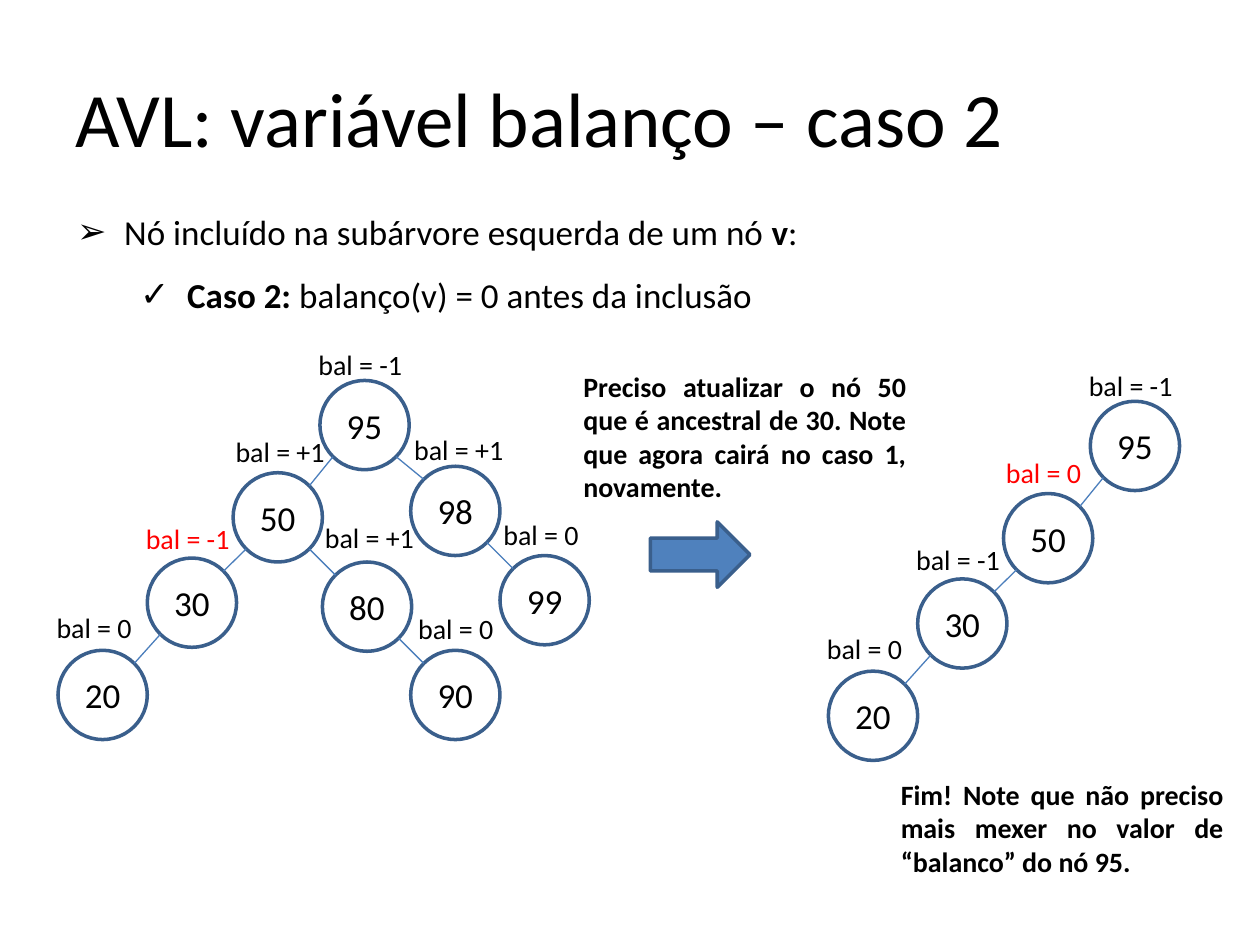
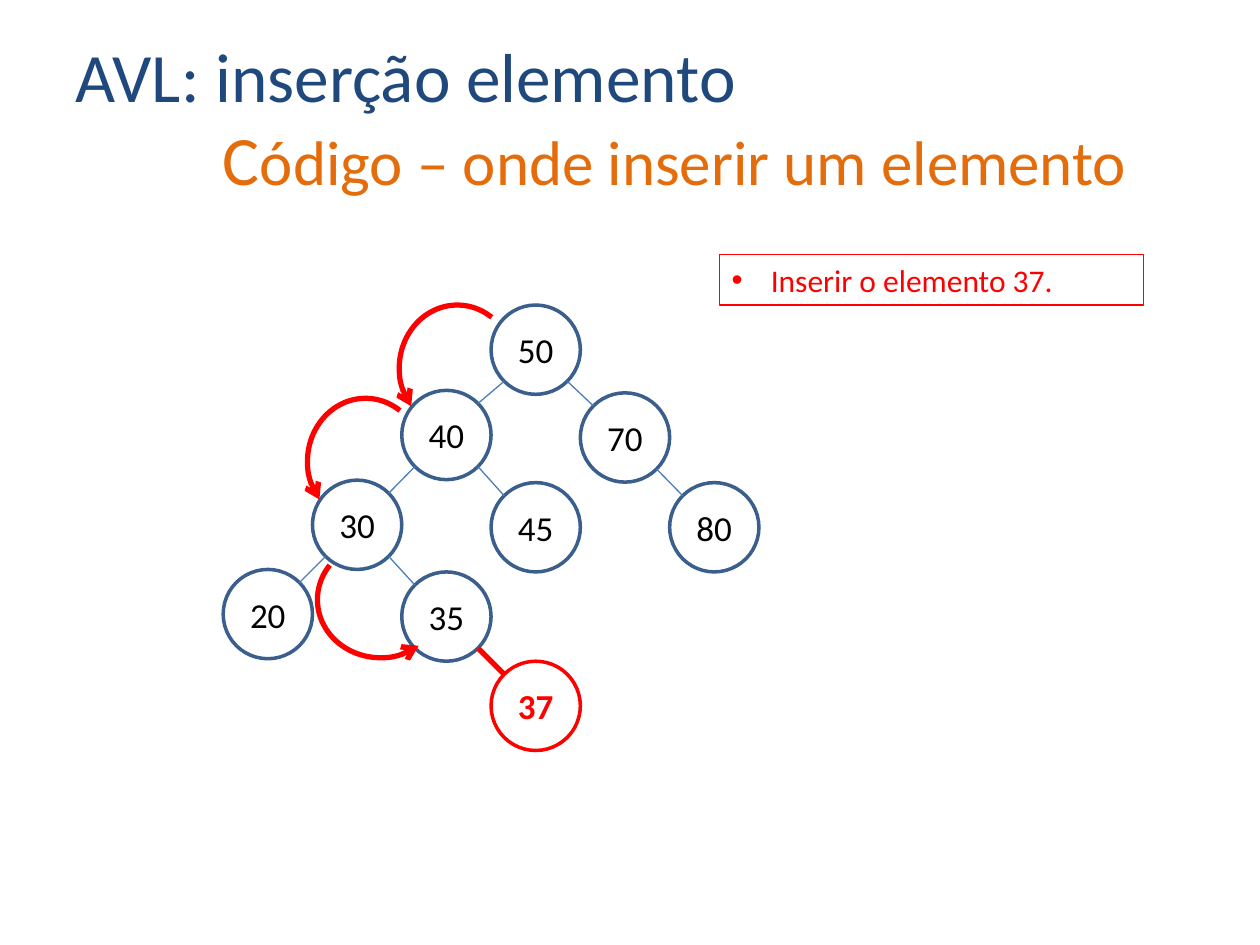
import pptx
import pptx.util
import pptx.dml.color
import pptx.enum.shapes
import pptx.enum.text
import pptx.oxml.ns
import lxml.etree

Cm, Pt = pptx.util.Cm, pptx.util.Pt
SHAPE = pptx.enum.shapes.MSO_SHAPE
ALIGN = pptx.enum.text.PP_ALIGN
ANCHOR = pptx.enum.text.MSO_ANCHOR

COLORS = {"text": "000000", "node": "3A5F8C", "edge": "4B7EBC", "arrow": "4F81BD",
          "mark": "FF0000", "title": "1F497D", "subtitle": "E46C0A"}
FONT = "Calibri"
NODE = 1.8                      # node diameter, cm
CORNER = NODE / 2 * 0.5 ** 0.5  # centre to the 45-degree point of a node

# Slide 1: runs are (text, bold)
CASE_TITLE = "AVL: variável balanço – caso 2"
CASE_LIST = [
    (0, "➢", 0.95, 0, [("Nó incluído na subárvore esquerda de um nó ", False),
                       ("v", True), (":", False)]),
    (1, "✓", 2.22, 12, [("Caso 2: ", True), ("balanço(v) = 0 antes da inclusão", False)]),
]
CASE_NODES = {"30": (2.97, 11.25), "20": (1.17, 13.11), "50": (4.7, 9.53), "80": (6.5, 11.33),
              "90": (8.28, 13.11), "95": (6.45, 7.67), "98": (8.28, 9.4), "99": (10.08, 11.2)}
CASE_EDGES = [("95", "50"), ("95", "98"), ("50", "30"), ("50", "80"),
              ("98", "99"), ("30", "20"), ("80", "90")]
LABEL_OFFSETS = {"30": (-0.28, -0.86), "20": (-0.28, -0.93), "50": (-0.2, -0.9),
                 "80": (-0.2, -0.96), "90": (-0.1, -0.91), "95": (-0.28, -0.78),
                 "98": (-0.18, -0.81), "99": (-0.18, -0.89)}
BEFORE = {"30": "-1", "20": "0", "50": "+1", "80": "+1",
          "90": "0", "95": "-1", "98": "+1", "99": "0"}
AFTER = {"30": "-1", "20": "0", "50": "0", "95": "-1"}
AFTER_SHIFT = (15.53, 0.42)
NOTES = [
    (11.51, 7.32, 3.0, "Preciso atualizar o nó 50 que é ancestral de 30. "
                       "Note que agora cairá no caso 1, novamente."),
    (17.91, 15.54, 2.31, "Fim! Note que não preciso mais mexer no valor de “balanco” do nó 95."),
]

# Slide 2: nodes are (column, top)
INSERT_TITLE = [("AVL: inserção elemento", 39.6, "title"), ("C", 39.6, "subtitle"),
                ("ódigo – onde inserir um elemento", 36, "subtitle")]
TASK = "Inserir o elemento 37."
GRID = {"50": (3, 6.15), "40": (2, 7.87), "70": (4, 7.92), "30": (1, 9.68), "80": (5, 9.73),
        "45": (3, 9.73), "20": (0, 11.48), "35": (2, 11.53), "37": (3, 13.33)}
INSERT_NODES = {key: (4.5 + NODE * col, top) for key, (col, top) in GRID.items()}
INSERT_EDGES = [("50", "70"), ("50", "40"), ("40", "30"), ("30", "20"),
                ("40", "45"), ("70", "80"), ("30", "35"), ("35", "37")]
INSERTED = "37"
PATH_ARCS = [(8.05, 6.15, 0), (6.2, 8.03, 0), (6.5, 10.82, 270)]


def rgb(name):
    return pptx.dml.color.RGBColor.from_string(COLORS[name])


def add_xml(parent, tag, **attrs):
    return lxml.etree.SubElement(parent, pptx.oxml.ns.qn(tag), attrs)


def set_line(sp, color, width):
    sp.line.color.rgb = rgb(color)
    sp.line.width = Pt(width)


def style(p, size, color="text", bold=None, align=None):
    p.font.name, p.font.size, p.font.bold = FONT, Pt(size), bold
    p.font.color.rgb = rgb(color)
    p.alignment = align


def set_indent(p, indent, bullet=None):
    """Hang the first line by the given cm; call before style()."""
    pPr = p._p.get_or_add_pPr()
    hang = indent if indent < 2 or bullet is None else 0.95
    pPr.set("marL", str(Cm(indent)))
    pPr.set("indent", str(-Cm(hang)))
    if bullet:
        add_xml(pPr, "a:buFont", typeface="Arial")
        add_xml(pPr, "a:buChar", char=bullet)


def place(sp, left, top, width, height):
    sp.left, sp.top, sp.width, sp.height = Cm(left), Cm(top), Cm(width), Cm(height)


def add_title(s):
    title = s.shapes.title
    place(title, 1.27, 0.76, 22.86, 3.18)
    title.text_frame.vertical_anchor = ANCHOR.MIDDLE
    return title.text_frame.paragraphs[0]


def add_shape(s, kind, left, top, width, height, line, line_width, fill=None):
    sp = s.shapes.add_shape(kind, Cm(left), Cm(top), Cm(width), Cm(height))
    sp.shadow.inherit = False
    set_line(sp, line, line_width)
    if fill:
        sp.fill.solid()
        sp.fill.fore_color.rgb = rgb(fill)
    else:
        sp.fill.background()
    return sp


def add_text(s, left, top, width, height, text, **font):
    tf = s.shapes.add_textbox(Cm(left), Cm(top), Cm(width), Cm(height)).text_frame
    tf.word_wrap = True
    p = tf.paragraphs[0]
    p.text = text
    style(p, 16, **font)


def add_tree(s, nodes, edges, shift=(0, 0), marked=None):
    nodes = {key: (x + shift[0], y + shift[1]) for key, (x, y) in nodes.items()}
    for key, (x, y) in nodes.items():
        hot = key == marked
        sp = add_shape(s, SHAPE.OVAL, x, y, NODE, NODE, "mark" if hot else "node", 2)
        sp.text_frame.word_wrap = False
        p = sp.text_frame.paragraphs[0]
        p.text = key
        style(p, 20, "mark" if hot else "text", hot, ALIGN.CENTER)
    half = NODE / 2
    for parent, child in edges:
        if parent not in nodes or child not in nodes:
            continue
        (x1, y1), (x2, y2) = nodes[parent], nodes[child]
        side = CORNER if x2 > x1 else -CORNER
        line = s.shapes.add_connector(
            pptx.enum.shapes.MSO_CONNECTOR.STRAIGHT,
            Cm(x1 + half + side), Cm(y1 + half + CORNER),
            Cm(x2 + half - side), Cm(y2 + half - CORNER))
        set_line(line, *(("mark", 3) if child == marked else ("edge", 0.75)))
        add_xml(line._element.spPr, "a:effectLst")
    return nodes


def add_balances(s, nodes, balances, changed):
    for key, value in balances.items():
        (x, y), (dx, dy) = nodes[key], LABEL_OFFSETS[key]
        add_text(s, x + dx, y + dy, 2.39, 0.94, f"bal = {value}",
                 color="mark" if key == changed else "text")


def build_case(prs):
    s = prs.slides.add_slide(prs.slide_layouts[1])
    p = add_title(s)
    p.text = CASE_TITLE
    style(p, 44, align=ALIGN.LEFT)

    body = s.placeholders[1]
    place(body, 1.3, 4.11, 22.71, 3.25)
    tf = body.text_frame
    for i, (level, bullet, indent, before, runs) in enumerate(CASE_LIST):
        p = tf.add_paragraph() if i else tf.paragraphs[0]
        p.level, p.space_before = level, Pt(before)
        set_indent(p, indent, bullet)
        style(p, 20, align=ALIGN.JUSTIFY)
        for text, bold in runs:
            r = p.add_run()
            r.text, r.font.bold = text, bold

    nodes = add_tree(s, CASE_NODES, CASE_EDGES)
    add_balances(s, nodes, BEFORE, "30")
    left_spine = {key: CASE_NODES[key] for key in AFTER}
    nodes = add_tree(s, left_spine, CASE_EDGES, AFTER_SHIFT)
    add_balances(s, nodes, AFTER, "50")
    add_shape(s, SHAPE.RIGHT_ARROW, 13.11, 10.52, 2.01, 1.32, "node", 2, "arrow")
    for left, top, height, text in NOTES:
        add_text(s, left, top, 7.01, height, text, bold=True, align=ALIGN.JUSTIFY)


def build_insertion(prs):
    s = prs.slides.add_slide(prs.slide_layouts[5])
    p = add_title(s)
    p.alignment = ALIGN.LEFT
    set_indent(p, 2.97)
    p.font.name = FONT
    for i, (text, size, color) in enumerate(INSERT_TITLE):
        if i == 1:
            p.add_line_break()
        r = p.add_run()
        r.text, r.font.size = text, Pt(size)
        r.font.color.rgb = rgb(color)

    add_tree(s, INSERT_NODES, INSERT_EDGES, marked=INSERTED)
    box = add_shape(s, SHAPE.RECTANGLE, 14.5, 5.13, 8.56, 1.02, "mark", 0.75)
    p = box.text_frame.paragraphs[0]
    p.text = TASK
    set_indent(p, 0.79, "•")
    style(p, 18, "mark", align=ALIGN.JUSTIFY)
    for left, top, turn in PATH_ARCS:
        arc = add_shape(s, SHAPE.ARC, left, top, 2.34, 2.54, "mark", 3)
        arc.adjustments[0], arc.adjustments[1] = 141.47, 23.81
        arc.rotation = turn
        arc._element.spPr.find(pptx.oxml.ns.qn("a:xfrm")).set("flipH", "1")
        add_xml(arc.line._get_or_add_ln(), "a:tailEnd", type="arrow")


def main():
    prs = pptx.Presentation()
    prs.slide_width, prs.slide_height = Cm(25.4), Cm(19.05)
    build_case(prs)
    build_insertion(prs)
    prs.save("out.pptx")


if __name__ == "__main__":
    main()
